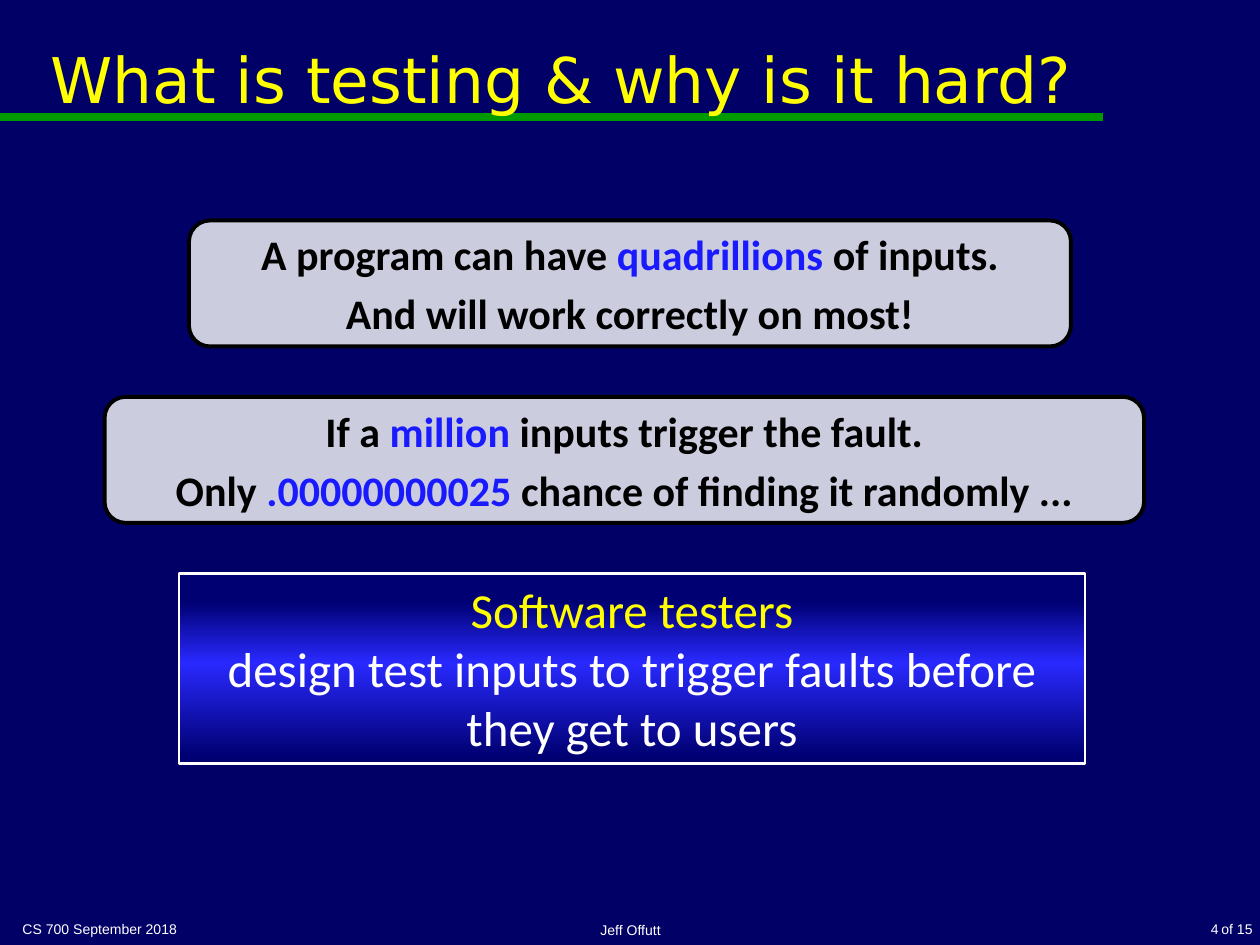
"""Build the slide on what testing is and why it is hard."""
from copy import deepcopy
from typing import NamedTuple

from lxml.etree import SubElement
from pptx import Presentation
from pptx.dml.color import RGBColor
from pptx.enum.shapes import MSO_CONNECTOR, MSO_SHAPE
from pptx.enum.text import MSO_ANCHOR, MSO_AUTO_SIZE, PP_ALIGN
from pptx.oxml.ns import qn
from pptx.util import Inches, Pt

HUES = {"navy": "000066", "green": "009900", "yellow": "FFFF00", "white": "FFFFFF",
        "black": "000000", "blue": "1A1AFF", "pale": "CCCCDF",
        "dark": "000073", "glow": "2929FF"}
TITLE = {"name": "DejaVu Sans", "size": Pt(36)}
FOOT = {"name": "Arial", "size": Pt(8)}
FACT = {"name": "Calibri", "size": Pt(24), "bold": True}
GOAL = {"name": "Calibri", "size": Pt(28)}
Run = tuple[str, str]
Area = tuple[float, float, float, float]


class Card(NamedTuple):
    """Hold a rounded box with its lines of coloured runs."""
    area: Area
    lines: list[list[Run]]


class Note(NamedTuple):
    """Hold a small footer text."""
    area: Area
    text: str
    align: PP_ALIGN
    anchor: MSO_ANCHOR = MSO_ANCHOR.BOTTOM
    wrap: bool = True


CARDS = [
    Card((1.5, 1.75, 7, 1), [
        [("A program can have ", "black"), ("quadrillions", "blue"), (" of inputs.", "black")],
        [("And will work correctly on most!", "black")]]),
    Card((0.83, 3.15, 8.25, 1), [
        [("If a ", "black"), ("million", "blue"), (" inputs trigger the fault.", "black")],
        [("Only ", "black"), (".00000000025", "blue"),
         (" chance of finding it randomly ...", "black")]]),
]
NOTES = [
    Note((9.59, 7.26, 0.45, 0.24), "of 15", PP_ALIGN.RIGHT, MSO_ANCHOR.TOP, False),
    Note((0.08, 7.16, 2.33, 0.33), "CS 700 September 2018", PP_ALIGN.LEFT),
    Note((3.42, 7.17, 3.17, 0.33), "Jeff Offutt", PP_ALIGN.CENTER),
    Note((7.58, 7.16, 2.19, 0.33), "4", PP_ALIGN.RIGHT),
]
STOPS = [(0.15, "dark"), (0.47, "glow"), (0.96, "dark")]


def hue(name: str) -> RGBColor:
    """Return the named colour."""
    return RGBColor.from_string(HUES[name])


def write(frame, lines: list[list[Run]], style: dict, align=PP_ALIGN.CENTER,
          anchor=MSO_ANCHOR.MIDDLE, gap: float = 0, wrap: bool = True) -> None:
    """Fill a text frame with lines of coloured runs."""
    frame.word_wrap = wrap
    frame.vertical_anchor = anchor
    for row, line in enumerate(lines):
        para = frame.add_paragraph() if row else frame.paragraphs[0]
        para.alignment = align
        if row and gap:
            para.space_before = Pt(gap)
        for text, tint in line:
            run = para.add_run()
            run.text = text
            for key, value in style.items():
                setattr(run.font, key, value)
            run.font.color.rgb = hue(tint)


def add_box(slide, kind: MSO_SHAPE, area: Area, edge: str, width: float):
    """Add an outlined shape without a shadow."""
    box = slide.shapes.add_shape(kind, *map(Inches, area))
    box.shadow.inherit = False
    box.line.color.rgb = hue(edge)
    box.line.width = Pt(width)
    return box


def add_card(slide, card: Card) -> None:
    """Draw one rounded card."""
    box = add_box(slide, MSO_SHAPE.ROUNDED_RECTANGLE, card.area, "black", 2.25)
    box.fill.solid()
    box.fill.fore_color.rgb = hue("pale")
    write(box.text_frame, card.lines, FACT, gap=4.8)


def add_note(slide, note: Note) -> None:
    """Draw one footer text."""
    box = slide.shapes.add_textbox(*map(Inches, note.area))
    write(box.text_frame, [[(note.text, "white")]], FOOT, note.align, note.anchor,
          wrap=note.wrap)


def add_rule(slide) -> None:
    """Draw the line under the title."""
    rule = slide.shapes.add_connector(
        MSO_CONNECTOR.STRAIGHT, 0, Inches(0.93), Inches(8.75), Inches(0.93))
    rule.line.color.rgb = hue("green")
    rule.line.width = Pt(4.5)
    SubElement(rule._element.spPr, qn("a:effectLst"))


def add_title(slide) -> None:
    """Place and fill the title."""
    title = slide.shapes.title
    title.left, title.top, title.width, title.height = map(Inches, (0.08, 0, 8.75, 1.25))
    write(title.text_frame, [[("What is testing & why is it hard?", "yellow")]], TITLE)


def add_goal(slide) -> None:
    """Draw the gradient box on what testers do."""
    box = add_box(slide, MSO_SHAPE.RECTANGLE, (1.42, 4.55, 7.19, 1.51), "white", 1.5)
    box.fill.gradient()
    box.fill.gradient_angle = 270
    group = box._element.spPr.find(qn("a:gradFill")).find(qn("a:gsLst"))
    group.append(deepcopy(group[-1]))
    for stop, (place, tint) in zip(box.fill.gradient_stops, STOPS):
        stop.position = place
        stop.color.rgb = hue(tint)
    write(box.text_frame, [
        [("Software testers", "yellow")],
        [("design test inputs to trigger faults before they get to users", "white")],
    ], GOAL, anchor=MSO_ANCHOR.TOP)
    box.text_frame.auto_size = MSO_AUTO_SIZE.SHAPE_TO_FIT_TEXT


def main() -> None:
    """Build and save the deck."""
    deck = Presentation()
    deck.slide_width, deck.slide_height = Inches(10), Inches(7.5)
    slide = deck.slides.add_slide(deck.slide_layouts[5])
    slide.background.fill.solid()
    slide.background.fill.fore_color.rgb = hue("navy")
    add_rule(slide)
    add_title(slide)
    for note in NOTES:
        add_note(slide, note)
    for card in CARDS:
        add_card(slide, card)
    add_goal(slide)
    title = slide.shapes.title._element
    title.getparent().append(title)
    deck.save("out.pptx")


if __name__ == "__main__":
    main()
